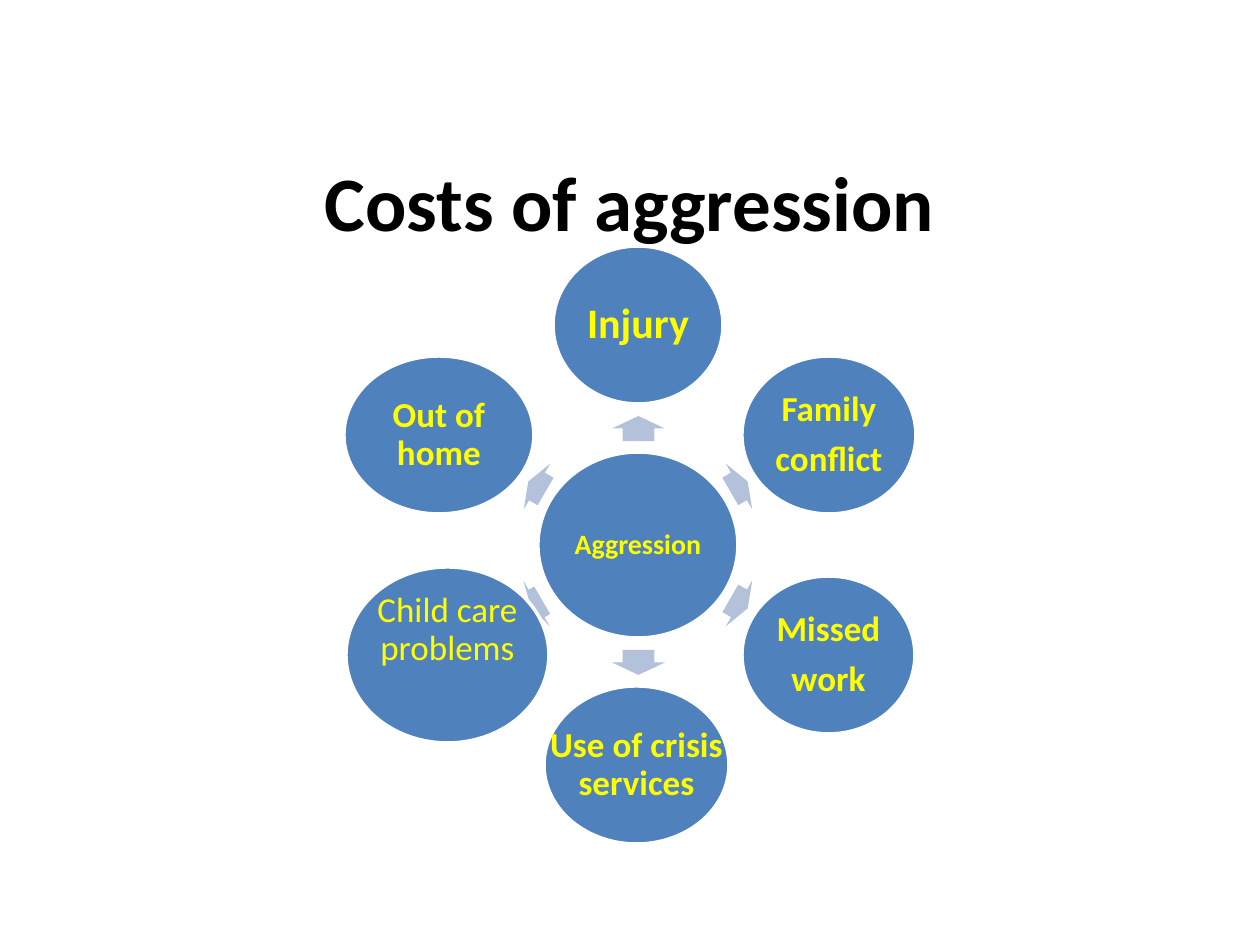
import math
from pptx import Presentation, util as u
from pptx.dml.color import RGBColor
from pptx.enum import shapes, text

SCALE = 914400 // 126
BLUE, PALE, YELLOW, WHITE, BLACK = "4F81BD", "B3C1DB", "FFFF00", "FFFFFF", "000000"
RING, ARROW_RING, ARROW_WIDTH = 220, 117, 53

# Outer circles: angle, paragraphs, width, height, sideways shift, format, arrow length
COSTS = [
    (-90, ["Injury"], 170, 158, 0, {"size": 24}, 25),
    (-30, ["Family", "conflict"], 174, 158, 0, {}, 20),
    (30, ["Missed", "work"], 173, 158, 0, {}, 20),
    (90, ["Use of crisis services"], 185, 158, -2, {}, 25),
    (150, ["Child care problems"], 203, 176, 0, {"bold": False}, 13),
    (210, ["Out of home"], 190, 158, -8, {}, 20),
]


def px(*lengths):
    return [u.Emu(round(length) * SCALE) for length in lengths]


def color(value):
    return RGBColor.from_string(value)


def set_font(para, values):
    for name, value in values.items():
        if name == "color":
            para.font.color.rgb = color(value)
        else:
            setattr(para.font, name, u.Pt(value) if name == "size" else value)


def add_shape(page, kind, x, y, width, height, fill):
    """Place a filled shape around its centre."""
    shape = page.shapes.add_shape(
        kind, *px(x - width / 2, y - height / 2, width, height))
    shape.shadow.inherit = False
    shape.fill.solid()
    shape.fill.fore_color.rgb = color(fill)
    return shape


def add_circle(page, x, y, width, height, lines, values, lift=0):
    circle = add_shape(page, shapes.MSO_SHAPE.OVAL, x, y, width, height, BLUE)
    circle.line.color.rgb = color(WHITE)
    circle.line.width = u.Pt(2)

    # The label uses the full width of the circle
    box = page.shapes.add_textbox(
        *px(x - width / 2, y - height / 2, width, height))
    frame = box.text_frame
    frame.word_wrap = True
    frame.vertical_anchor = text.MSO_ANCHOR.MIDDLE
    for side in ("left", "right", "top", "bottom"):
        setattr(frame, "margin_" + side, px(5)[0])
    frame.margin_bottom = px(5 + 2 * lift)[0]
    frame.text = "\n".join(lines)
    label = {"name": "Calibri", "size": 20, "bold": True, "color": YELLOW} | values
    for para in frame.paragraphs:
        para.alignment = text.PP_ALIGN.CENTER
        para.line_spacing = 0.9
        para.space_after = u.Pt(7)
        set_font(para, label)


def add_arrow(page, x, y, length, angle):
    arrow = add_shape(page, shapes.MSO_SHAPE.RIGHT_ARROW,
                      x, y, length, ARROW_WIDTH, PALE)
    arrow.line.fill.background()
    arrow.adjustments[0] = 0.6
    arrow.adjustments[1] = 0.5
    arrow.rotation = angle % 360


def add_title(page, left, top, width, height):
    title = page.shapes.title
    title.left, title.top, title.width, title.height = px(left, top, width, height)
    frame = title.text_frame
    frame.text = "Costs of aggression"
    frame.vertical_anchor = text.MSO_ANCHOR.MIDDLE
    para = frame.paragraphs[0]
    para.alignment = text.PP_ALIGN.CENTER
    set_font(para, {"name": "Calibri", "size": 44, "bold": True, "color": BLACK})


def add_radial(page, x, y):
    """Draw the hub at x, y with the costs around it."""
    add_circle(page, x, y, 200, 186, ["Aggression"], {"size": 16})
    for angle, lines, width, height, shift, values, length in COSTS:
        across, down = math.cos(math.radians(angle)), math.sin(math.radians(angle))
        add_arrow(page, x + ARROW_RING * across, y + ARROW_RING * down, length, angle)
        lift = 25 if angle == 150 else 0
        add_circle(page, x + RING * across + shift, y + RING * down,
                   width, height, lines, values, lift)


def main():
    deck = Presentation()
    deck.slide_width, deck.slide_height = px(1260, 945)
    page = deck.slides.add_slide(deck.slide_layouts[5])
    add_title(page, 63, 122, 1134, 158)
    add_radial(page, 638, 545)
    deck.save("out.pptx")


if __name__ == "__main__":
    main()
